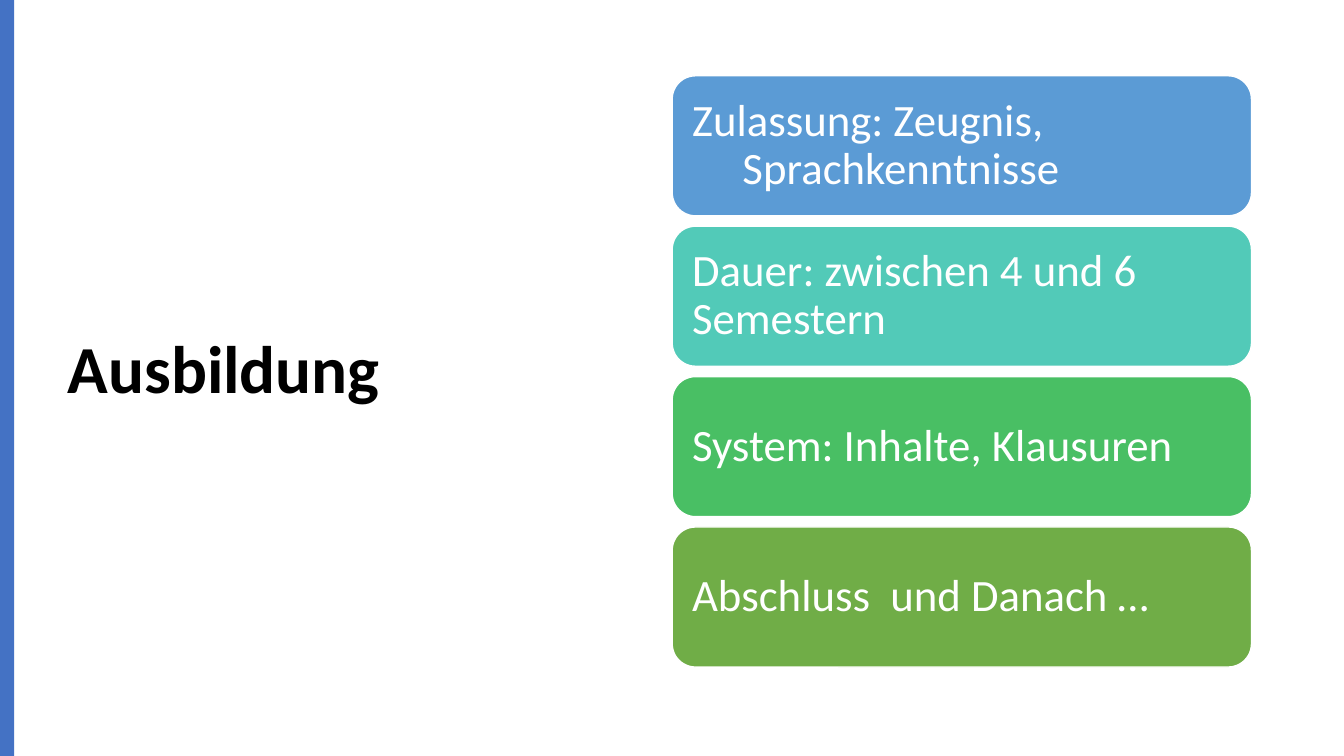
"""Build the slide "Ausbildung" with four stacked topic cards."""
from pptx import Presentation
from pptx.dml.color import RGBColor
from pptx.enum.shapes import MSO_SHAPE
from pptx.enum.text import MSO_ANCHOR, MSO_AUTO_SIZE, PP_ALIGN
from pptx.util import Cm, Pt

COLORS = {
    "text": "000000",
    "white": "FFFFFF",
    "stripe": "4472C4",
    "blue": "5B9BD5",
    "teal": "52CAB8",
    "green": "49BF64",
    "olive": "70AD47",
}
HEADING = "Ausbildung"
TOPICS = [
    ("Zulassung: Zeugnis, Sprachkenntnisse", "blue", 1.27),
    ("Dauer: zwischen 4 und 6 Semestern", "teal", 0),
    ("System: Inhalte, Klausuren", "green", 0),
    ("Abschluss  und Danach …", "olive", 0),
]
SLIDE_WIDTH, SLIDE_HEIGHT = 33.87, 19.05
CARD_LEFT, CARD_TOP, CARD_WIDTH, CARD_HEIGHT = 16.94, 1.91, 14.6, 3.53
CARD_GAP = 0.26
CARD_INSET = 0.33


def color(name):
    """Return the named colour."""
    return RGBColor.from_string(COLORS[name])


def add_block(slide, kind, left, top, width, height, fill):
    """Add a flat filled shape without an outline."""
    block = slide.shapes.add_shape(kind, Cm(left), Cm(top), Cm(width), Cm(height))
    block.shadow.inherit = False
    block.fill.solid()
    block.fill.fore_color.rgb = color(fill)
    block.line.fill.background()
    return block


def format_text(frame, text, size, ink, bold=False):
    """Write one left-aligned, vertically centred paragraph."""
    frame.word_wrap = True
    frame.auto_size = MSO_AUTO_SIZE.NONE
    frame.vertical_anchor = MSO_ANCHOR.MIDDLE
    frame.text = text
    paragraph = frame.paragraphs[0]
    paragraph.alignment = PP_ALIGN.LEFT
    paragraph.line_spacing = 0.9
    paragraph.font.name = "Calibri"
    paragraph.font.size = Pt(size)
    paragraph.font.bold = bold
    paragraph.font.color.rgb = color(ink)
    return paragraph


def add_card(slide, row, text, fill, hanging):
    """Add one topic card, with wrapped lines indented by the hanging length."""
    top = CARD_TOP + row * (CARD_HEIGHT + CARD_GAP)
    card = add_block(slide, MSO_SHAPE.ROUNDED_RECTANGLE,
                     CARD_LEFT, top, CARD_WIDTH, CARD_HEIGHT, fill)
    card.line.color.rgb = color("white")
    card.line.width = Pt(1)
    frame = card.text_frame
    frame.margin_left = frame.margin_right = Cm(CARD_INSET)
    frame.margin_top = frame.margin_bottom = Cm(CARD_INSET)
    topic = format_text(frame, text, 32, "white")
    if hanging:
        indent = topic._p.get_or_add_pPr()
        indent.set("marL", str(Cm(hanging)))
        indent.set("indent", str(-Cm(hanging)))


def main():
    """Compose and save the slide."""
    deck = Presentation()
    deck.slide_width, deck.slide_height = Cm(SLIDE_WIDTH), Cm(SLIDE_HEIGHT)
    slide = deck.slides.add_slide(deck.slide_layouts[5])

    heading = slide.shapes.title
    heading.left, heading.top = Cm(1.45), Cm(1.73)
    heading.width, heading.height = Cm(14.4), Cm(15.29)
    format_text(heading.text_frame, HEADING, 48, "text", bold=True)

    add_block(slide, MSO_SHAPE.RECTANGLE, 0, 0, 0.36, SLIDE_HEIGHT, "stripe")
    for row, topic in enumerate(TOPICS):
        add_card(slide, row, *topic)

    deck.save("out.pptx")


if __name__ == "__main__":
    main()
